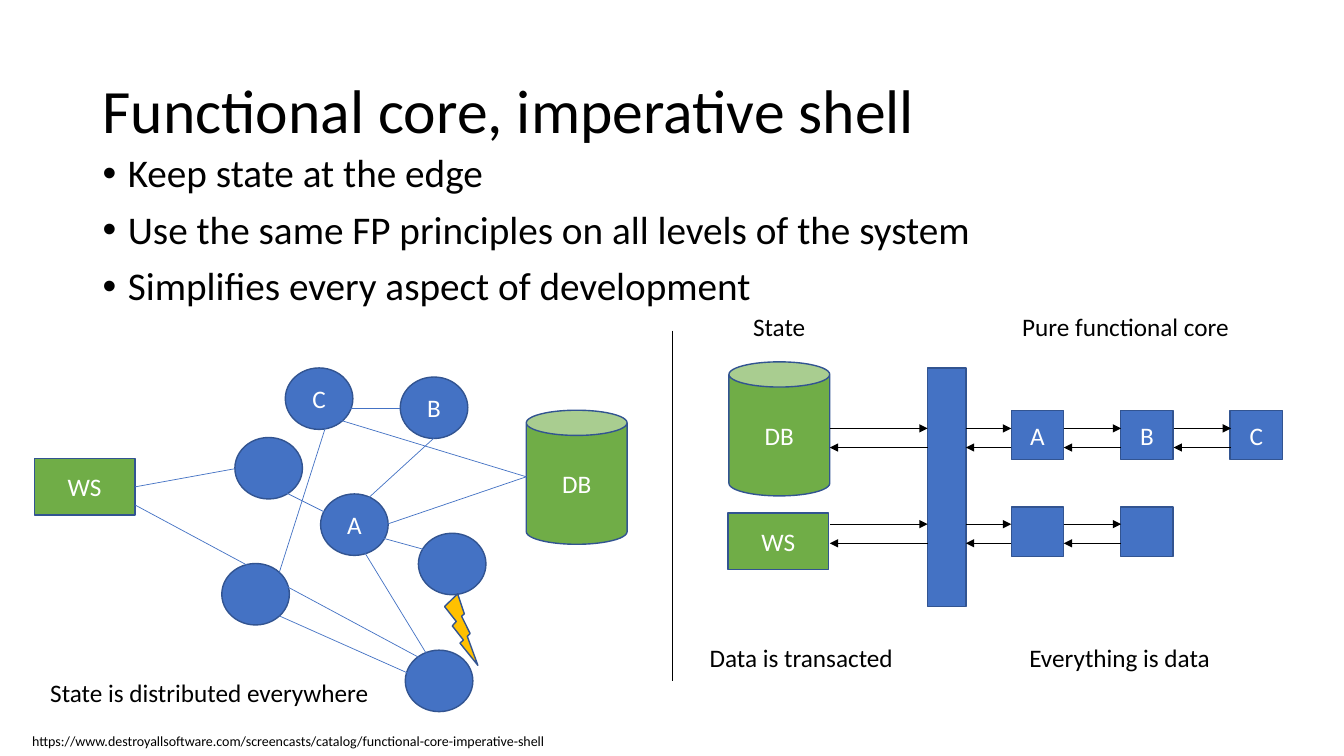
"""Build the slide comparing scattered state with a functional core."""
from dataclasses import dataclass

from lxml import etree
from pptx import Presentation
from pptx import util as u
from pptx.dml.color import RGBColor
from pptx.enum import shapes, text
from pptx.oxml import ns

FONT = "Calibri"
BLACK, WHITE = "000000", "FFFFFF"
BLUE, GREEN, AMBER, OUTLINE = "4472C4", "70AD47", "FFC000", "325491"
KIND = shapes.MSO_SHAPE


@dataclass(frozen=True)
class Block:
    kind: int
    left: float
    top: float
    width: float
    height: float
    fill: str = BLUE
    label: str = ""


@dataclass(frozen=True)
class Link:
    start: tuple[float, float]
    end: tuple[float, float]
    color: str = BLUE
    arrow: bool = False


@dataclass(frozen=True)
class Caption:
    left: float
    top: float
    width: float
    words: str


def rgb(value: str) -> RGBColor:
    return RGBColor.from_string(value)


def node(left: float, top: float, label: str = "") -> Block:
    return Block(KIND.OVAL, left, top, 0.67, 0.61, BLUE, label)


def step(column: int, top: float, label: str = "") -> Block:
    return Block(KIND.RECTANGLE, 10.03 + 1.085 * column, top, 0.52, 0.49, BLUE, label)


def database(left: float, top: float) -> Block:
    return Block(KIND.CAN, left, top, 1, 1.33, GREEN, "DB")


def web_service(left: float, top: float) -> Block:
    return Block(KIND.RECTANGLE, left, top, 1, 0.56, GREEN, "WS")


BLOCKS = [
    node(2.33, 4.34),
    node(3.18, 4.9, "A"),
    node(2.83, 3.65, "C"),
    node(2.2, 5.59),
    node(4.15, 5.29),
    node(3.97, 3.74, "B"),
    Block(KIND.LIGHTNING_BOLT, 4.41, 5.89, 0.33, 0.71, AMBER),
    node(4.02, 6.45),
    database(5.22, 4.07),
    web_service(0.34, 4.55),
    *[step(column, 4.07, label) for column, label in enumerate("ABC")],
    *[step(column, 5.03) for column in range(2)],
    Block(KIND.RECTANGLE, 9.2, 3.65, 0.38, 2.37),
    database(7.23, 3.59),
    web_service(7.22, 5.09),
]

TANGLE = [
    Link((3.28, 4.05), (3.97, 4.05)),
    Link((4.3, 4.35), (3.6, 4.99)),
    Link((3.62, 5.29), (4.42, 5.51)),
    Link((4.3, 6.6), (3.5, 5.29)),
    Link((4.23, 6.76), (2.77, 6.11)),
    Link((3.42, 5.18), (2.72, 4.83)),
    Link((3.26, 4.14), (2.77, 5.68)),
    Link((3.84, 5.2), (5.22, 4.73)),
    Link((3.28, 4.14), (5.22, 4.73)),
    Link((1.34, 4.83), (2.33, 4.65)),
    Link((1.34, 5.01), (4.3, 6.6)),
]

DIVIDER = Link((6.67, 3.28), (6.67, 6.76), BLACK)
GAPS = [(8.23, 9.2), (9.58, 10.03), (10.55, 11.12), (11.64, 12.21)]
ROWS = [(4.25, 4.44, 4), (5.2, 5.39, 3)]

CAPTIONS = [
    Caption(10.04, 3.04, 2.28, "Pure functional core"),
    Caption(7.37, 3.04, 0.72, "State"),
    Caption(10.11, 6.32, 2.01, "Everything is data"),
    Caption(6.94, 6.32, 2.04, "Data is transacted"),
    Caption(0.4, 6.67, 3.4, "State is distributed everywhere"),
]


def write(shape, words: str, *, size: float = 18, color: str = BLACK, wrap: bool = True,
          align=text.PP_ALIGN.LEFT, anchor=text.MSO_ANCHOR.TOP,
          spacing: float = 1, before: float = 0, bullet: str = "") -> None:
    frame = shape.text_frame
    frame.word_wrap = wrap
    frame.vertical_anchor = anchor
    for index, line in enumerate(words.split("\n")):
        paragraph = frame.paragraphs[0] if index == 0 else frame.add_paragraph()
        paragraph.text = line
        paragraph.alignment = align
        paragraph.line_spacing = spacing
        if index:
            paragraph.space_before = u.Pt(before)
        if bullet:
            properties = paragraph._p.get_or_add_pPr()
            properties.set("marL", str(u.Inches(0.25)))
            properties.set("indent", str(u.Inches(-0.25)))
            etree.SubElement(properties, ns.qn("a:buFont"), typeface="Arial")
            etree.SubElement(properties, ns.qn("a:buChar"), char=bullet)
        paragraph.font.name = FONT
        paragraph.font.size = u.Pt(size)
        paragraph.font.color.rgb = rgb(color)


def add_text(slide, left: float, top: float, width: float, height: float,
             words: str, **style) -> None:
    box = slide.shapes.add_textbox(*map(u.Inches, (left, top, width, height)))
    write(box, words, **style)


def add_block(slide, block: Block) -> None:
    shape = slide.shapes.add_shape(
        block.kind, *map(u.Inches, (block.left, block.top, block.width, block.height)))
    shape.shadow.inherit = False
    shape.fill.solid()
    shape.fill.fore_color.rgb = rgb(block.fill)
    shape.line.color.rgb = rgb(OUTLINE)
    shape.line.width = u.Pt(1)
    if block.label:
        write(shape, block.label, color=WHITE, align=text.PP_ALIGN.CENTER,
              anchor=text.MSO_ANCHOR.MIDDLE)


def add_link(slide, link: Link) -> None:
    connector = slide.shapes.add_connector(
        shapes.MSO_CONNECTOR.STRAIGHT, *map(u.Inches, link.start + link.end))
    connector.line.color.rgb = rgb(link.color)
    connector.line.width = u.Pt(0.5)
    if link.arrow:
        etree.SubElement(connector.line._get_or_add_ln(), ns.qn("a:tailEnd"), type="triangle")
    etree.SubElement(connector._element.spPr, ns.qn("a:effectLst"))


def main() -> None:
    presentation = Presentation()
    presentation.slide_width = u.Inches(13.33)
    presentation.slide_height = u.Inches(7.5)
    slide = presentation.slides.add_slide(presentation.slide_layouts[6])

    add_text(slide, 0.92, 0.4, 11.5, 1.45, "Functional core, imperative shell",
             size=44, spacing=0.9, anchor=text.MSO_ANCHOR.MIDDLE)
    add_text(slide, 0.92, 1.48, 11.5, 5.27,
             "Keep state at the edge\n"
             "Use the same FP principles on all levels of the system\n"
             "Simplifies every aspect of development",
             size=28, spacing=0.9, before=10, bullet="•")

    for block in BLOCKS:
        add_block(slide, block)
    for link in [*TANGLE, DIVIDER]:
        add_link(slide, link)
    for request, reply, count in ROWS:
        for left, right in GAPS[:count]:
            add_link(slide, Link((left, request), (right, request), BLACK, True))
            add_link(slide, Link((right, reply), (left, reply), BLACK, True))

    for caption in CAPTIONS:
        add_text(slide, caption.left, caption.top, caption.width, 0.4,
                 caption.words, wrap=False)
    add_text(slide, 0.22, 7.22, 10.62, 0.27,
             "https://www.destroyallsoftware.com/screencasts/catalog/"
             "functional-core-imperative-shell", size=10)
    presentation.save("out.pptx")


if __name__ == "__main__":
    main()
